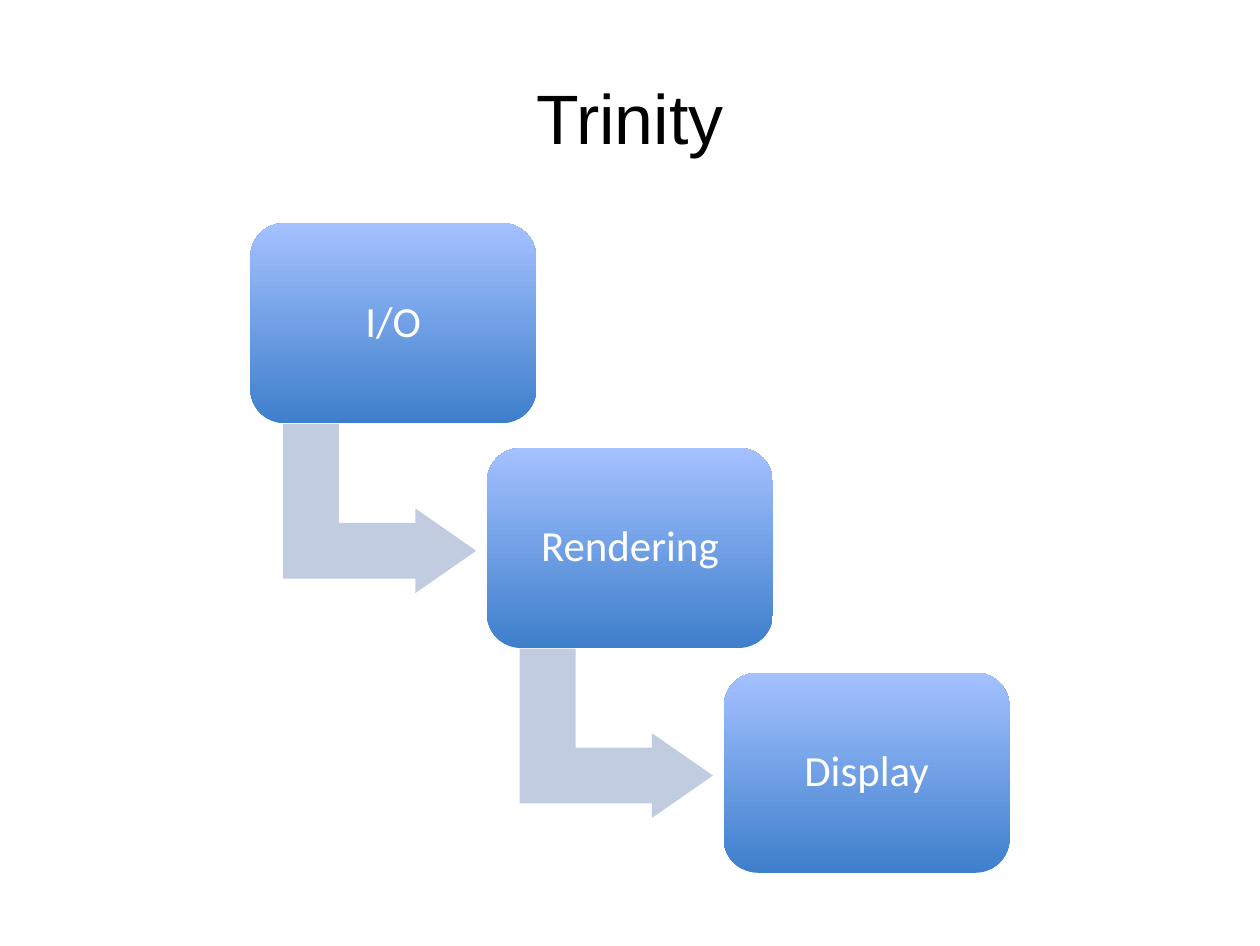
import dataclasses

import pptx
import pptx.dml.color
import pptx.enum.dml
import pptx.enum.shapes
import pptx.enum.text
import pptx.util

Inches = pptx.util.Inches
Shapes = pptx.enum.shapes.MSO_SHAPE


def color(code):
    return pptx.dml.color.RGBColor.from_string(code)


@dataclasses.dataclass
class Theme:
    ink: str = "000000"
    light: str = "FFFFFF"
    arrow: str = "C2CCE1"
    low: str = "3E7FCC"
    high: str = "A4C1FF"
    head: str = "Arial"
    body: str = "Calibri"
    big: int = 44
    mid: int = 27


class Deck:
    def __init__(self, theme, slide):
        self.theme = theme
        self.slide = slide

    def label(self, shape, text, face, size, tint, inset=(0, 0), space=1.0):
        """Set centred text; inset holds the side and the top margin."""
        frame = shape.text_frame
        side, edge = map(Inches, inset)
        form = {
            "word_wrap": True,
            "vertical_anchor": pptx.enum.text.MSO_ANCHOR.MIDDLE,
            "margin_left": side,
            "margin_right": side,
            "margin_top": edge,
            "margin_bottom": edge,
        }
        for name, value in form.items():
            setattr(frame, name, value)
        para = frame.paragraphs[0]
        para.alignment = pptx.enum.text.PP_ALIGN.CENTER
        para.line_spacing = space
        run = para.add_run()
        run.text = text
        for name, value in {"name": face, "size": pptx.util.Pt(size)}.items():
            setattr(run.font, name, value)
        run.font.color.rgb = color(tint)

    def title(self, text, *area):
        box = self.slide.shapes.add_textbox(*map(Inches, area))
        self.label(box, text, self.theme.head, self.theme.big, self.theme.ink)

    def shape(self, kind, area, adjust):
        item = self.slide.shapes.add_shape(kind, *map(Inches, area))
        item.shadow.inherit = False
        item.line.fill.background()
        for index, value in enumerate(adjust):
            item.adjustments[index] = value
        return item

    def arrow(self, *area):
        item = self.shape(Shapes.BENT_UP_ARROW, area, (0.33, 0.25, 0.36))
        item.rotation = 90
        item.fill.solid()
        item.fill.fore_color.rgb = color(self.theme.arrow)

    def block(self, text, *area):
        item = self.shape(Shapes.ROUNDED_RECTANGLE, area, (0.17,))
        item.fill.gradient()
        item.fill.gradient_angle = 90
        for stop, tint in zip(item.fill.gradient_stops,
                              (self.theme.low, self.theme.high)):
            stop.color.rgb = color(tint)
        self.label(item, text, self.theme.body, self.theme.mid,
                   self.theme.light, (0.11, 0.18), 0.9)


def main():
    show = pptx.Presentation()
    show.slide_width, show.slide_height = Inches(11.02), Inches(8.27)
    deck = Deck(Theme(), show.slides.add_slide(show.slide_layouts[6]))
    deck.title("Trinity", 0.55, 0.33, 9.92, 1.38)

    steps = ("I/O", "Rendering", "Display")
    last = len(steps) - 1
    for index, step in enumerate(steps):
        left = 2.19 + index * 4.14 / last
        top = 1.95 + index * 3.93 / last
        if index < last:
            deck.arrow(left + 0.39, top + 1.65, 1.48, 1.69)
        deck.block(step, left, top, 2.5, 1.75)

    show.save("out.pptx")


if __name__ == "__main__":
    main()
